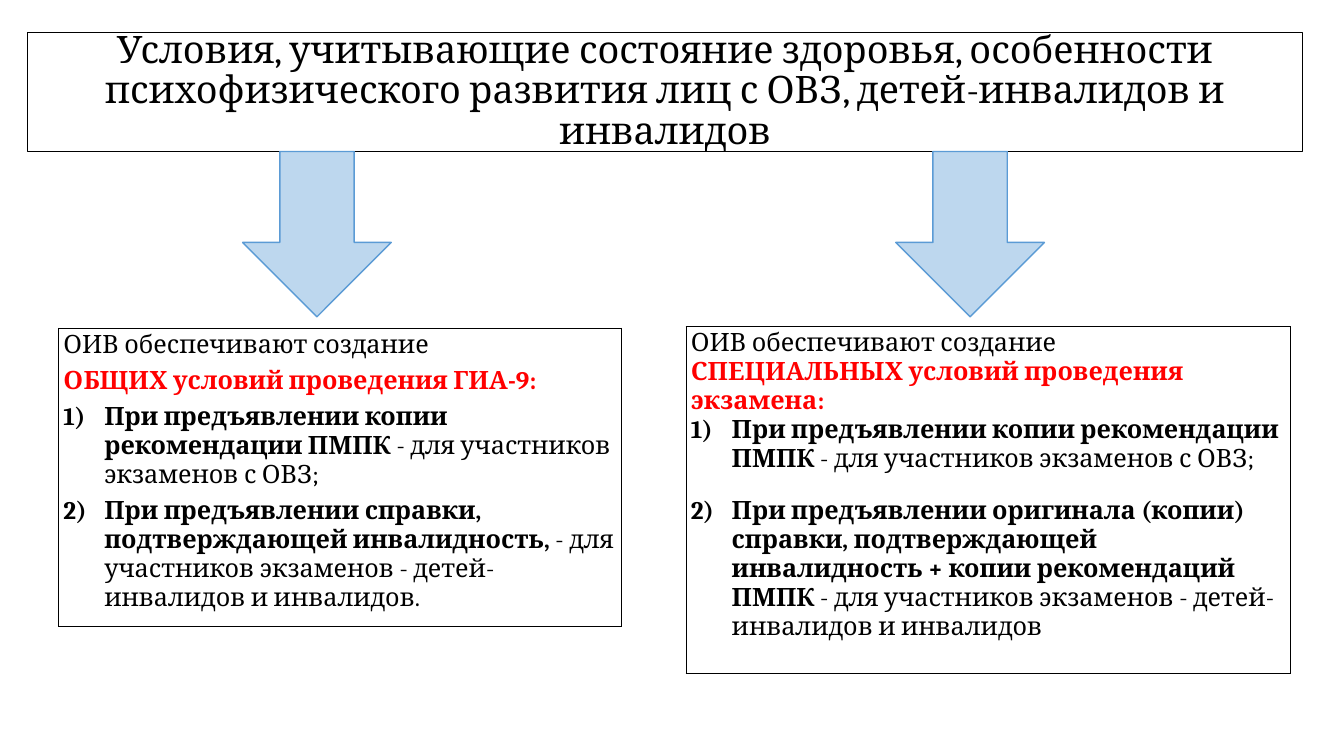
from lxml.etree import SubElement
from pptx import Presentation
from pptx.dml.color import RGBColor
from pptx.enum.shapes import MSO_SHAPE as Shape
from pptx.enum.text import MSO_ANCHOR as Anchor, MSO_AUTO_SIZE as AutoSize, PP_ALIGN as Align
from pptx.oxml.ns import qn
from pptx.util import Inches, Pt

BLACK = RGBColor(0x00, 0x00, 0x00)
WHITE = RGBColor(0xFF, 0xFF, 0xFF)
RED = RGBColor(0xFF, 0x00, 0x00)
PALE_BLUE = RGBColor(0xBD, 0xD7, 0xEE)
BLUE = RGBColor(0x5B, 0x9B, 0xD5)

HEADING = ("Условия, учитывающие состояние здоровья, особенности психофизического "
           "развития лиц с ОВЗ, детей-инвалидов и инвалидов")
INTRO = "ОИВ обеспечивают создание"
GENERAL = [
    ("При предъявлении копии рекомендации ПМПК ",
     "- для участников экзаменов с ОВЗ;", 10),
    ("При предъявлении справки, подтверждающей инвалидность, ",
     "- для участников экзаменов - детей-инвалидов и инвалидов.", 10),
]
SPECIAL = [
    ("При предъявлении копии рекомендации ПМПК",
     " - для участников экзаменов с ОВЗ;", 33),
    ("При предъявлении оригинала (копии) справки, подтверждающей инвалидность "
     "+ копии рекомендаций ПМПК",
     " - для участников экзаменов - детей-инвалидов и инвалидов", 0),
]


class ConditionsSlide:
    """Draws the heading, arrows and condition tables in one style."""

    font = "Cambria"
    text_size = 36
    title_size = 54
    indent = Inches(0.81)

    def __init__(self, page):
        self.page = page

    def add_span(self, para, text, size, color=BLACK, bold=False):
        span = para.add_run()
        span.text = text
        span.font.name = self.font
        span.font.size = Pt(size)
        span.font.bold = bold
        span.font.color.rgb = color

    def add_title(self, text, left, top, width, height):
        box = self.page.shapes.title
        box.left, box.top, box.width, box.height = map(Inches, (left, top, width, height))
        box.line.color.rgb = BLACK
        box.line.width = Pt(0.75)
        frame = box.text_frame
        frame.word_wrap = True
        frame.auto_size = AutoSize.NONE
        frame.vertical_anchor = Anchor.MIDDLE
        para = frame.paragraphs[0]
        para.alignment = Align.CENTER
        para.line_spacing = 0.9
        self.add_span(para, text, self.title_size)

    def add_arrow(self, left, top, width, height):
        arrow = self.page.shapes.add_shape(
            Shape.RIGHT_ARROW, *map(Inches, (left, top, width, height)))
        arrow.rotation = 90
        arrow.shadow.inherit = False
        arrow.fill.solid()
        arrow.fill.fore_color.rgb = PALE_BLUE
        arrow.line.color.rgb = BLUE
        arrow.line.width = Pt(2)

    def add_borders(self, cell):
        properties = cell._tc.get_or_add_tcPr()
        for side in ("a:lnL", "a:lnR", "a:lnT", "a:lnB"):
            border = SubElement(properties, qn(side), w=str(Pt(1)))
            fill = SubElement(border, qn("a:solidFill"))
            SubElement(fill, qn("a:srgbClr"), val=str(BLACK))

    def number(self, para):
        properties = para._p.get_or_add_pPr()
        properties.set("marL", str(self.indent))
        properties.set("indent", str(-self.indent))
        SubElement(properties, qn("a:buFont"), typeface=self.font)
        SubElement(properties, qn("a:buAutoNum"), type="arabicParenR")

    def add_conditions(self, left, top, width, height, subject, items, gap):
        table = self.page.shapes.add_table(
            1, 1, *map(Inches, (left, top, width, height))).table
        table.first_row = table.horz_banding = False
        cell = table.cell(0, 0)
        self.add_borders(cell)
        cell.fill.solid()
        cell.fill.fore_color.rgb = WHITE
        frame = cell.text_frame
        para = frame.paragraphs[0]
        para.space_after = Pt(gap)
        self.add_span(para, INTRO, self.text_size)
        para = frame.add_paragraph()
        para.space_after = Pt(gap)
        self.add_span(para, subject, self.text_size, RED, True)
        for condition, people, after in items:
            para = frame.add_paragraph()
            para.space_after = Pt(after)
            self.number(para)
            self.add_span(para, condition, self.text_size, bold=True)
            self.add_span(para, people, self.text_size)


def main():
    deck = Presentation()
    deck.slide_width, deck.slide_height = Inches(26.67), Inches(15)
    slide = ConditionsSlide(deck.slides.add_slide(deck.slide_layouts[5]))
    slide.add_title(HEADING, 0.55, 0.64, 25.3, 2.36)
    for left in (4.65, 17.61):
        slide.add_arrow(left, 3.17, 3.28, 2.95)
    slide.add_conditions(1.16, 6.51, 11.17, 5.91,
                         "ОБЩИХ условий проведения ГИА-9:", GENERAL, 10)
    slide.add_conditions(13.61, 6.48, 12, 6.88,
                         "СПЕЦИАЛЬНЫХ условий проведения экзамена:", SPECIAL, 0)
    deck.save("out.pptx")


if __name__ == "__main__":
    main()
